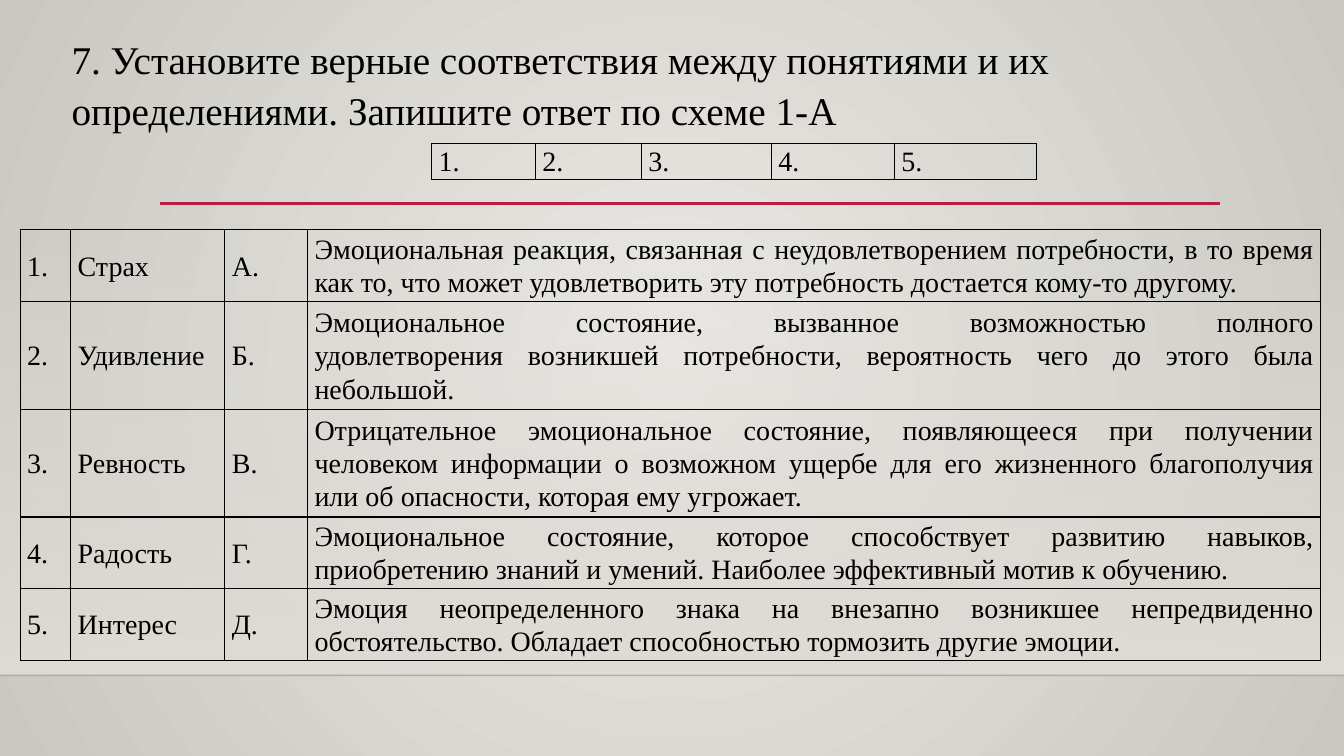
from lxml.etree import SubElement
from pptx import Presentation
from pptx.dml.color import RGBColor
from pptx.enum.shapes import MSO_CONNECTOR, MSO_SHAPE
from pptx.enum.text import MSO_ANCHOR, PP_ALIGN
from pptx.oxml.ns import qn
from pptx.util import Inches, Pt


def color(value):
    return RGBColor.from_string(value)


def set_alpha(color_element, percent):
    SubElement(color_element, qn("a:alpha"), val=str(percent * 1000))


class SlideBuilder:
    font_name = "Times New Roman"
    ink = "000000"
    line_spacing = 1.07

    def __init__(self, presentation):
        self.slide = presentation.slides.add_slide(presentation.slide_layouts[5])

    def gradient(self, fill, start, end):
        fill.gradient()
        for stop, value, position in zip(fill.gradient_stops, (start, end), (0, 1)):
            stop.color.rgb = color(value)
            stop.position = position

    def background(self, center, edge):
        fill = self.slide.background.fill
        self.gradient(fill, center, edge)
        gradient = self.slide.element.find(".//" + qn("a:gradFill"))
        gradient.remove(gradient.find(qn("a:lin")))
        circle = SubElement(gradient, qn("a:path"), {"path": "circle"})
        SubElement(circle, qn("a:fillToRect"), l="50000", t="50000", r="50000", b="50000")

    def fading_panel(self, left, top, width, height, value):
        shape = self.slide.shapes.add_shape(
            MSO_SHAPE.RECTANGLE, Inches(left), Inches(top), Inches(width), Inches(height))
        shape.shadow.inherit = False
        shape.line.fill.background()
        self.gradient(shape.fill, value, value)
        shape.fill.gradient_angle = 270
        set_alpha(shape.element.spPr.find(".//" + qn("a:srgbClr")), 0)

    def rule(self, left, right, y, value, width, alpha=100):
        line = self.slide.shapes.add_connector(
            MSO_CONNECTOR.STRAIGHT, Inches(left), Inches(y), Inches(right), Inches(y))
        line.line.color.rgb = color(value)
        line.line.width = Pt(width)
        properties = line.element.spPr
        if alpha < 100:
            set_alpha(properties.find(".//" + qn("a:srgbClr")), alpha)
        SubElement(properties, qn("a:effectLst"))

    def set_text(self, frame, text, size, align=PP_ALIGN.LEFT):
        paragraph = frame.paragraphs[0]
        paragraph.text = text
        paragraph.alignment = align
        paragraph.line_spacing = self.line_spacing
        paragraph.font.name = self.font_name
        paragraph.font.size = Pt(size)
        paragraph.font.color.rgb = color(self.ink)

    def title(self, left, top, width, height, text):
        title = self.slide.shapes.title
        title.left, title.top = Inches(left), Inches(top)
        title.width, title.height = Inches(width), Inches(height)
        title.text_frame.word_wrap = True
        title.text_frame.vertical_anchor = MSO_ANCHOR.TOP
        self.set_text(title.text_frame, text, 28)

    def table(self, left, top, widths, heights, rows, justified_column=None):
        frame = self.slide.shapes.add_table(
            len(rows), len(widths), Inches(left), Inches(top),
            Inches(sum(widths)), Inches(sum(heights)))
        table = frame.table
        table.first_row = table.horz_banding = False
        for column, width in zip(table.columns, widths):
            column.width = Inches(width)
        for row, height, texts in zip(table.rows, heights, rows):
            row.height = Inches(height)
            for index, (cell, text) in enumerate(zip(row.cells, texts)):
                justified = index == justified_column
                self.set_text(cell.text_frame, text, 20,
                              PP_ALIGN.JUSTIFY if justified else PP_ALIGN.LEFT)
                self.format_cell(cell)

    def format_cell(self, cell):
        cell.vertical_anchor = MSO_ANCHOR.MIDDLE
        cell.margin_left = cell.margin_right = Inches(0.07)
        cell.margin_top = cell.margin_bottom = 0
        properties = cell._tc.get_or_add_tcPr()
        for side in ("lnL", "lnR", "lnT", "lnB"):
            border = SubElement(properties, qn("a:" + side), w=str(Pt(1)))
            solid = SubElement(border, qn("a:solidFill"))
            SubElement(solid, qn("a:srgbClr"), val=self.ink)
        cell.fill.background()


CONCEPTS = [
    ("Страх", "А.", "Эмоциональная реакция, связанная с неудовлетворением потребности, в то время "
     "как то, что может удовлетворить эту потребность достается кому-то другому."),
    ("Удивление", "Б.", "Эмоциональное состояние, вызванное возможностью полного\n"
     "удовлетворения возникшей потребности, вероятность чего до этого была небольшой."),
    ("Ревность", "В.", "Отрицательное эмоциональное состояние, появляющееся при получении "
     "человеком информации о возможном ущербе для его жизненного благополучия "
     "или об опасности, которая ему угрожает."),
    ("Радость", "Г.", "Эмоциональное состояние, которое способствует развитию навыков,\n"
     "приобретению знаний и умений. Наиболее эффективный мотив к обучению."),
    ("Интерес", "Д.", "Эмоция неопределенного знака на внезапно возникшее непредвиденно\n"
     "обстоятельство. Обладает способностью тормозить другие эмоции."),
]


def main():
    presentation = Presentation()
    presentation.slide_width = Inches(13.33)
    presentation.slide_height = Inches(7.5)
    builder = SlideBuilder(presentation)

    # Backdrop and rules
    builder.background("ECEAE7", "CAC7C1")
    builder.fading_panel(0, 2.21, 13.33, 4.49, "DFDBD5")
    builder.rule(0, 13.33, 6.7, "000001", 1, alpha=20)
    builder.rule(1.59, 12.1, 2.02, "B71E42", 2.5)

    # Task
    builder.title(0.61, 0.27, 10.96, 1.11,
                  "7. Установите верные соответствия между понятиями и их "
                  "определениями. Запишите ответ по схеме 1-А")

    # Concepts and definitions
    numbers = [f"{number}." for number in range(1, len(CONCEPTS) + 1)]
    rows = [(number, *concept) for number, concept in zip(numbers, CONCEPTS)]
    builder.table(0.2, 2.28, [0.5, 1.53, 0.82, 10.05],
                  [0.71, 1.07, 1.07, 0.71, 0.71], rows, justified_column=3)

    # Answer grid
    builder.table(4.28, 1.42, [1.03, 1.05, 1.29, 1.22, 1.41], [0.36], [numbers])

    presentation.save("out.pptx")


if __name__ == "__main__":
    main()
